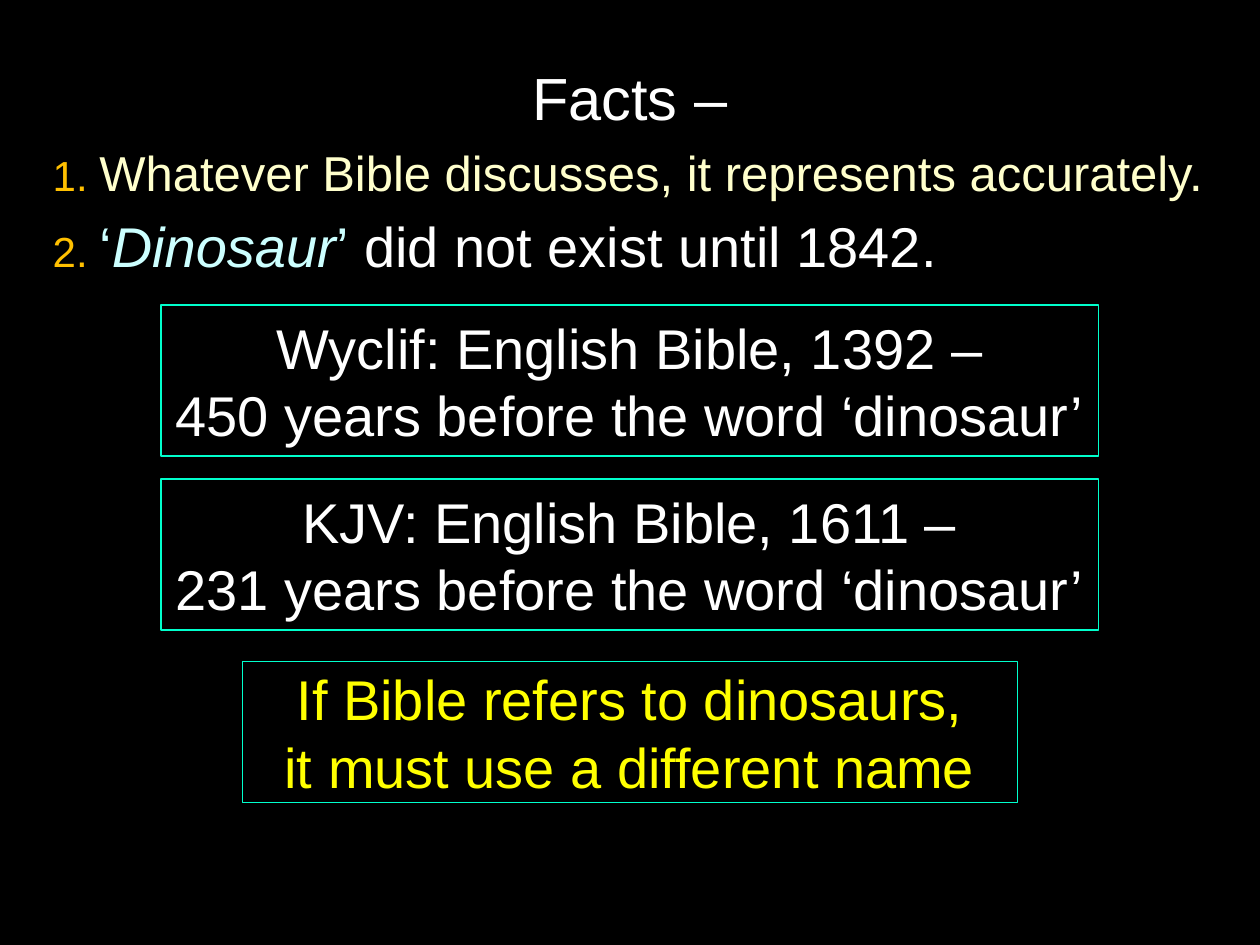
"""Build a slide of two facts and three boxed remarks."""
from dataclasses import dataclass

from pptx import Presentation
from pptx.dml.color import RGBColor
from pptx.enum.shapes import MSO_SHAPE
from pptx.enum.text import MSO_ANCHOR, PP_ALIGN
from pptx.util import Inches, Pt

RECT = MSO_SHAPE.RECTANGLE
TOP, MIDDLE = MSO_ANCHOR.TOP, MSO_ANCHOR.MIDDLE
LEFT, CENTER = PP_ALIGN.LEFT, PP_ALIGN.CENTER


@dataclass(frozen=True)
class Theme:
    font: str = "Arial"
    back: str = "000000"
    white: str = "FFFFFF"
    gold: str = "FFC000"
    cream: str = "FFFFCC"
    ice: str = "CCFFFF"
    yellow: str = "FFFF00"
    edge: str = "00FFCC"
    title: int = 34
    mark: int = 24
    fact: int = 28
    large: int = 32


THEME = Theme()
WIDTH, HEIGHT = 10, 7.5

TITLE = "Facts –"
FACTS = [
    [("1. ", THEME.mark, THEME.gold, False),
     ("Whatever Bible discusses, it represents accurately.",
      THEME.fact, THEME.cream, False)],
    [("2. ", THEME.mark, THEME.gold, False),
     ("‘", THEME.large, THEME.ice, False),
     ("Dinosaur", THEME.large, THEME.ice, True),
     ("’", THEME.large, THEME.ice, False),
     (" did not exist until 1842.", THEME.large, THEME.white, False)],
]
CARDS = [
    (["Wyclif: English Bible, 1392 –",
      "450 years before the word ‘dinosaur’"], 2.42, 7.44, 1.2, THEME.white),
    (["KJV: English Bible, 1611 –",
      "231 years before the word ‘dinosaur’"], 3.8, 7.44, 1.2, THEME.white),
    (["If Bible refers to dinosaurs,",
      "it must use a different name"], 5.25, 6.15, 1.12, THEME.yellow),
]


def add_run(para, text, size, color, slant=False):
    run = para.add_run()
    run.text = text
    font = run.font
    font.name, font.size, font.italic = THEME.font, Pt(size), slant
    font.color.rgb = RGBColor.from_string(color)


def write(shape, paras, align=LEFT, anchor=TOP, hang=0, before=0):
    frame = shape.text_frame
    frame.word_wrap = True
    frame.vertical_anchor = anchor
    for i, runs in enumerate(paras):
        para = frame.add_paragraph() if i else frame.paragraphs[0]
        para.alignment = align
        para.space_before = Pt(before)
        if hang:
            props = para._p.get_or_add_pPr()
            props.set("marL", str(Inches(hang)))
            props.set("indent", str(-Inches(hang)))
        for run in runs:
            if run is None:
                para.add_line_break()
            else:
                add_run(para, *run)


def add_card(slide, lines, top, width, height, color):
    box = [Inches(n) for n in ((WIDTH - width) / 2, top, width, height)]
    card = slide.shapes.add_shape(RECT, *box)
    card.shadow.inherit = False
    card.fill.solid()
    card.fill.fore_color.rgb = RGBColor.from_string(THEME.back)
    card.line.color.rgb = RGBColor.from_string(THEME.edge)
    card.line.width = Pt(1)
    first, last = [(line, THEME.large, color) for line in lines]
    write(card, [[first, None, last]], align=CENTER, anchor=MIDDLE)


def add_text(slide, box, paras, **style):
    write(slide.shapes.add_textbox(*map(Inches, box)), paras, **style)


def main():
    deck = Presentation()
    deck.slide_width, deck.slide_height = Inches(WIDTH), Inches(HEIGHT)
    slide = deck.slides.add_slide(deck.slide_layouts[6])
    fill = slide.background.fill
    fill.solid()
    fill.fore_color.rgb = RGBColor.from_string(THEME.back)
    add_text(slide, (0.5, 0.21, 9, 1.12), [[(TITLE, THEME.title, THEME.white)]],
             align=CENTER, anchor=MIDDLE)
    add_text(slide, (0.32, 1.08, 9.37, 5.92), FACTS, hang=0.37, before=6)
    for card in CARDS:
        add_card(slide, *card)
    deck.save("out.pptx")


if __name__ == "__main__":
    main()
